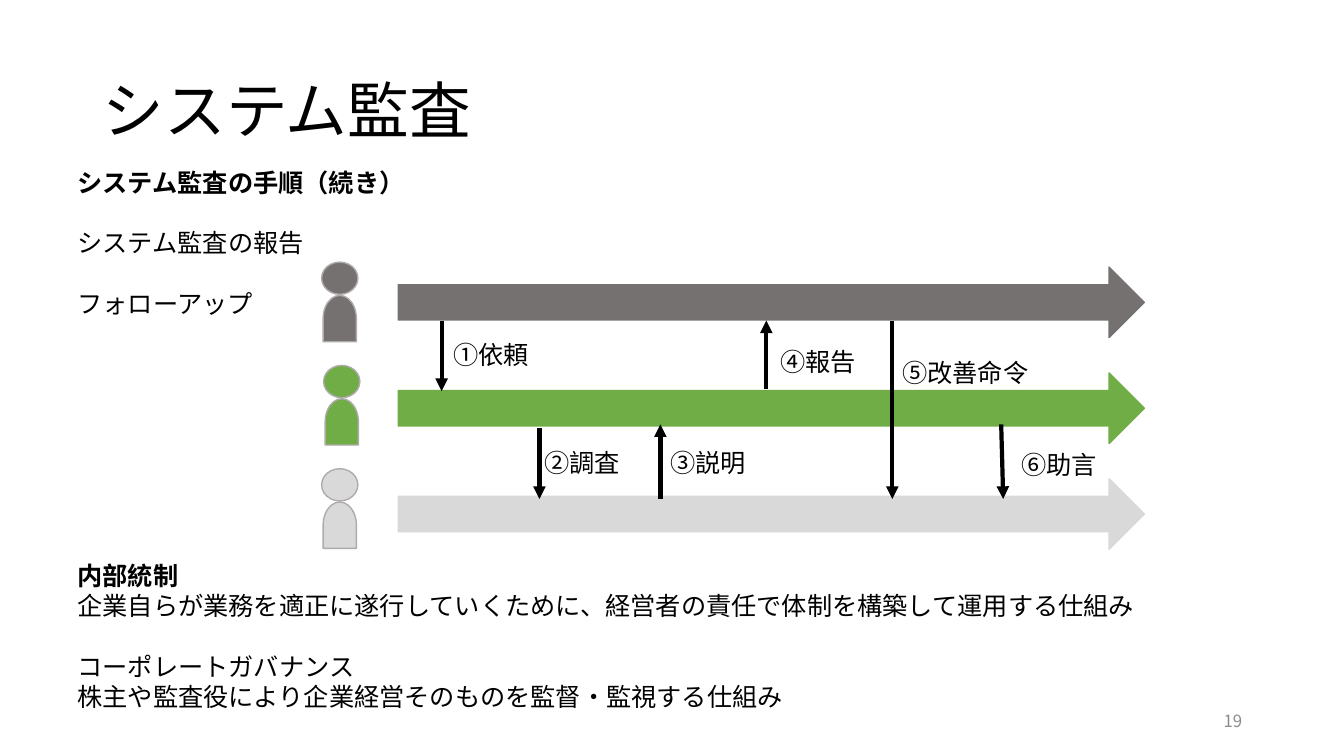
from lxml import etree
from pptx import Presentation
from pptx.dml.color import RGBColor
from pptx.enum.shapes import MSO_CONNECTOR, MSO_SHAPE
from pptx.enum.text import MSO_ANCHOR, MSO_AUTO_SIZE, PP_ALIGN
from pptx.oxml.ns import qn
from pptx.util import Inches, Pt

HEAD, TORSO, BAND = (MSO_SHAPE.FLOWCHART_CONNECTOR, MSO_SHAPE.FLOWCHART_DELAY,
                     MSO_SHAPE.RIGHT_ARROW)
STRAIGHT = MSO_CONNECTOR.STRAIGHT
LEFT, RIGHT = PP_ALIGN.LEFT, PP_ALIGN.RIGHT
TOP, MIDDLE = MSO_ANCHOR.TOP, MSO_ANCHOR.MIDDLE
NO_AUTOSIZE = MSO_AUTO_SIZE.NONE

BLACK = RGBColor(0x00, 0x00, 0x00)
DARK_GRAY = RGBColor(0x76, 0x71, 0x71)
GREEN = RGBColor(0x70, 0xAD, 0x47)
LIGHT_GRAY = RGBColor(0xD9, 0xD9, 0xD9)
OUTLINE_GRAY = RGBColor(0xAF, 0xAB, 0xAB)
NUMBER_GRAY = RGBColor(0x8C, 0x8C, 0x8C)

JAPANESE_FONT = "Noto Sans CJK JP"
BODY_FONT = "Arial"
CELL = Inches(0.1)
LINE_HEIGHT = 21.6

LANES = [(DARK_GRAY, 31.9), (GREEN, 32.1), (LIGHT_GRAY, 31.9)]
PERSON_TOP, PERSON_STEP = 26, 10.25
BAND_TOP, BAND_STEP = 26.5, 10.5

BODY = [
    ("システム監査の手順（続き）", True, 0),
    ("システム監査の報告", False, 1),
    ("フォローアップ", False, 1),
    ("内部統制", True, 8),
    ("企業自らが業務を適正に遂行していくために、経営者の責任で体制を構築して運用する仕組み", False, 0),
    ("コーポレートガバナンス", False, 1),
    ("株主や監査役により企業経営そのものを監督・監視する仕組み", False, 0),
]

STEPS = [
    ("①依頼", (43.8, 31.8), (43.8, 38.8), (44, 33.2, 11.1)),
    ("②調査", (53.5, 42.5), (53.5, 49.5), (53, 43.9, 11.1)),
    ("③説明", (65.5, 49.5), (65.5, 42.1), (65.5, 43.9, 11.1)),
    ("④報告", (76, 38.6), (76, 31.8), (76.4, 33.9, 11.1)),
    ("⑤改善命令", (88.5, 31.8), (88.5, 49.5), (88.5, 35, 15.4)),
    ("⑥助言", (99.3, 42.1), (99.5, 49.5), (100.3, 44.1, 11.1)),
]


def cells(*counts):
    """Convert counts of grid cells to lengths."""
    return [round(count * CELL) for count in counts]


def format_paragraph(paragraph, size, color=BLACK, font=JAPANESE_FONT, bold=False):
    """Set size, colour, weight and both typefaces of a paragraph's runs."""
    for run in paragraph.runs:
        run.font.size = Pt(size)
        run.font.color.rgb = color
        run.font.name = font
        run.font.bold = bold
        east_asian = etree.SubElement(run.font._element, qn("a:ea"))
        east_asian.set("typeface", font)


def add_text(slide, box, text, size=18, color=BLACK, align=LEFT, anchor=TOP):
    """Add a wrapped one-paragraph text box."""
    text_frame = slide.shapes.add_textbox(*cells(*box)).text_frame
    text_frame.word_wrap = True
    text_frame.vertical_anchor = anchor
    paragraph = text_frame.paragraphs[0]
    paragraph.text = text
    paragraph.alignment = align
    format_paragraph(paragraph, size, color)


def add_title(slide, text):
    """Place and format the title placeholder."""
    title = slide.shapes.title
    title.left, title.top, title.width, title.height = cells(9.2, 4, 115, 14.5)
    text_frame = title.text_frame
    text_frame.text = text
    text_frame.auto_size = NO_AUTOSIZE
    text_frame.vertical_anchor = MIDDLE
    paragraph = text_frame.paragraphs[0]
    paragraph.alignment = LEFT
    paragraph.line_spacing = 0.9
    format_paragraph(paragraph, 44)


def add_body(slide):
    """Add the explanation, spaced in whole lines around the diagram."""
    text_frame = slide.shapes.add_textbox(*cells(6.7, 16.1, 119.9, 55.5)).text_frame
    text_frame.word_wrap = True
    text_frame.text = "\n".join(text for text, bold, gap in BODY)
    for paragraph, (text, bold, gap) in zip(text_frame.paragraphs, BODY):
        paragraph.line_spacing = Pt(LINE_HEIGHT)
        paragraph.space_before = Pt(gap * LINE_HEIGHT)
        format_paragraph(paragraph, 18, font=BODY_FONT, bold=bold)


def add_filled(slide, kind, box, fill, outline):
    """Add a preset shape with a flat fill and a thin outline."""
    shape = slide.shapes.add_shape(kind, *cells(*box))
    shape.shadow.inherit = False
    shape.fill.solid()
    shape.fill.fore_color.rgb = fill
    shape.line.color.rgb = outline
    shape.line.width = Pt(1)
    return shape


def add_person(slide, left, top, color):
    """Add a head above an upright torso."""
    add_filled(slide, HEAD, (left, top, 3.6, 3.2), color, OUTLINE_GRAY)
    torso = add_filled(slide, TORSO, (left - 0.5, top + 3.95, 4.6, 3.3), color, OUTLINE_GRAY)
    torso.rotation = 270


def add_arrow(slide, start, end):
    """Add a black line with an arrowhead at its end."""
    arrow = slide.shapes.add_connector(STRAIGHT, *cells(*start, *end))
    arrow.line.color.rgb = BLACK
    arrow.line.width = Pt(3)
    line = arrow.line._get_or_add_ln()
    etree.SubElement(line, qn("a:tailEnd")).set("type", "triangle")
    etree.SubElement(arrow._element.spPr, qn("a:effectLst"))


def main():
    """Build the system audit slide."""
    presentation = Presentation()
    presentation.slide_width = Inches(13.33)
    presentation.slide_height = Inches(7.5)
    slide = presentation.slides.add_slide(presentation.slide_layouts[5])
    add_title(slide, "システム監査")
    add_text(slide, (94.2, 69.5, 30, 4), "19", 12, NUMBER_GRAY, RIGHT, MIDDLE)
    add_body(slide)
    for index, (color, left) in enumerate(LANES):
        add_person(slide, left, PERSON_TOP + index * PERSON_STEP, color)
        band_box = (39.5, BAND_TOP + index * BAND_STEP, 74, 7)
        add_filled(slide, BAND, band_box, color, color)
    for label, start, end, (left, top, width) in STEPS:
        add_arrow(slide, start, end)
        add_text(slide, (left, top, width, 4), label)
    presentation.save("out.pptx")


if __name__ == "__main__":
    main()
